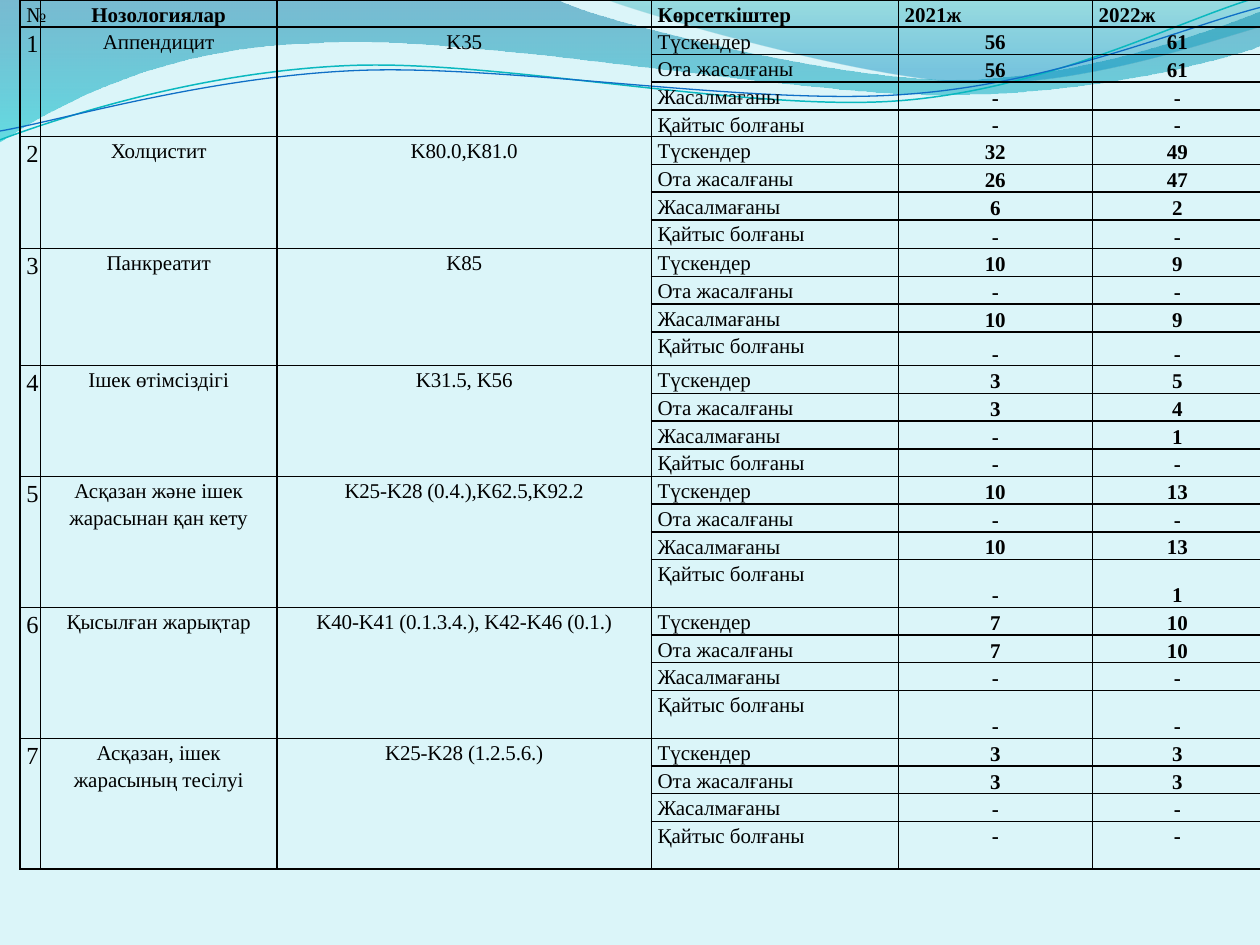
import dataclasses
import math

import lxml.etree
import pptx
import pptx.dml.color
import pptx.enum.text
import pptx.oxml.ns
import pptx.util

Inches = pptx.util.Inches
Align = pptx.enum.text.PP_ALIGN
Anchor = pptx.enum.text.MSO_ANCHOR
qn = pptx.oxml.ns.qn


@dataclasses.dataclass(frozen=True)
class Theme:
    font: str = "Times New Roman"
    body_size: float = 12
    number_size: float = 14
    line_spacing: float = 1.15
    ink: str = "000000"
    background: str = "DBF5F9"
    wide_wave: tuple = (("0074A1", 45, 0), ("00C6CF", 55, 1))
    short_wave: tuple = (("00A1A9", 30, 0), ("008BBF", 45, 0.8))
    teal: str = "0AB8BF"
    blue: str = "0F6FC6"


THEME = Theme()


def color(value):
    return pptx.dml.color.RGBColor.from_string(value)


def write(frame, text, size=THEME.body_size, bold=False, align=Align.CENTER, tracking=0):
    para = frame.paragraphs[0]
    para.alignment = align
    para.line_spacing = THEME.line_spacing
    if not text:
        end = lxml.etree.SubElement(para._p, qn("a:endParaRPr"))
        end.set("sz", str(int(size * 100)))
        return
    span = para.add_run()
    span.text = text
    span.font.name = THEME.font
    span.font.size = pptx.util.Pt(size)
    span.font.bold = bold
    span.font.color.rgb = color(THEME.ink)
    if tracking:
        span.font._element.set("spc", str(tracking))


class Page:
    def __init__(self, deck, theme):
        self.theme = theme
        self.slide = deck.slides.add_slide(deck.slide_layouts[6])
        fill = self.slide.background.fill
        fill.solid()
        fill.fore_color.rgb = color(theme.background)

    def outline(self, start, steps, close):
        points = [point for step in steps for point in step]
        scaled = [(Inches(x), Inches(y)) for x, y in points]
        builder = self.slide.shapes.build_freeform(Inches(start[0]), Inches(start[1]))
        builder.add_line_segments(scaled, close=close)
        shape = builder.convert_to_shape()
        shape.shadow.inherit = False
        segments = iter(list(shape.element.iter(qn("a:lnTo"))))
        for step in steps:
            group = [next(segments) for _ in step]
            if len(group) == 3:
                curve = lxml.etree.Element(qn("a:cubicBezTo"))
                group[0].addprevious(curve)
                for segment in group:
                    curve.append(segment[0])
                    segment.getparent().remove(segment)
        return shape

    def wave(self, start, steps, stops):
        shape = self.outline(start, steps, True)
        shape.line.fill.background()
        shape.fill.gradient()
        shape.fill.gradient_angle = 270
        for stop, (tint, opacity, position) in zip(shape.fill.gradient_stops, stops):
            stop.color.rgb = color(tint)
            stop.position = position
        for tint, stop in zip(shape.element.iter(qn("a:srgbClr")), stops):
            alpha = lxml.etree.SubElement(tint, qn("a:alpha"))
            alpha.set("val", str(stop[1] * 1000))

    def ribbon(self, start, steps, center, tilt, tint, width):
        angle = math.radians(tilt)

        def level(point):
            x, y = point[0] - center[0], point[1] - center[1]
            return (center[0] + x * math.cos(angle) - y * math.sin(angle),
                    center[1] + x * math.sin(angle) + y * math.cos(angle))

        flat = [[level(point) for point in step] for step in steps]
        shape = self.outline(level(start), flat, False)
        shape.rotation = 360 - tilt
        shape.fill.background()
        shape.line.color.rgb = color(tint)
        shape.line.width = pptx.util.Pt(width)

    def table(self, left, top, columns, rows):
        frame = self.slide.shapes.add_table(
            len(rows), len(columns), Inches(left), Inches(top),
            Inches(sum(columns)), Inches(sum(rows)))
        table = frame.table
        table.first_row = table.horz_banding = False
        for column, width in zip(table.columns, columns):
            column.width = Inches(width)
        for row, height in zip(table.rows, rows):
            row.height = Inches(height)
        for cell in table.iter_cells():
            self.border(cell)
        return table

    def border(self, cell):
        properties = cell._tc.get_or_add_tcPr()
        for side in ("a:lnL", "a:lnR", "a:lnT", "a:lnB"):
            edge = lxml.etree.SubElement(properties, qn(side), w=str(pptx.util.Pt(1)))
            fill = lxml.etree.SubElement(edge, qn("a:solidFill"))
            lxml.etree.SubElement(fill, qn("a:srgbClr"), val=self.theme.ink)
        cell.fill.background()

    def cell(self, table, row, column, text, anchor=Anchor.TOP, **style):
        cell = table.cell(row, column)
        cell.margin_left = cell.margin_right = Inches(0.05)
        cell.margin_top = cell.margin_bottom = 0
        cell.vertical_anchor = anchor
        write(cell.text_frame, text, **style)


HEADERS = ["№", "Нозологиялар", "", "Көрсеткіштер", "2021ж", "2022ж"]
INDICATORS = ["Түскендер", "Ота жасалғаны", "Жасалмағаны", "Қайтыс болғаны"]
DISEASES = [
    ("Аппендицит", "K35", "56 56 - -", "61 61 - -", 0.21),
    ("Холцистит", "K80.0,K81.0", "32 26 6 -", "49 47 2 -", 0.23),
    ("Панкреатит", "K85", "10 - 10 -", "9 - 9 -", 0.27),
    ("Ішек өтімсіздігі", "K31.5, K56", "3 3 - -", "5 4 1 -", 0.22),
    ("Асқазан және ішек жарасынан қан кету", "K25-K28 (0.4.),K62.5,K92.2",
     "10 - 10 -", "13 - 13 1", 0.38),
    ("Қысылған жарықтар", "K40-K41 (0.1.3.4.), K42-K46 (0.1.)",
     "7 7 - -", "10 10 - -", 0.38),
    ("Асқазан, ішек жарасының тесілуі", "K25-K28 (1.2.5.6.)",
     "3 3 - -", "3 3 - -", 0.38),
]


def draw_waves(page):
    page.wave((0, 0), [
        [(4.4, -0.01)],
        [(4.76, 0.17), (6.64, 0.63), (7.58, 0.63)],
        [(8.53, 0.63), (9.58, 0.26), (10, 0.09)],
        [(10.01, 0.36)],
        [(9.83, 0.44), (8.7, 0.76), (7.46, 0.75)],
        [(6.22, 0.75), (3.82, 0.28), (2.57, 0.34)],
        [(1.29, 0.36), (0.46, 0.83), (-0.01, 1.13)],
    ], THEME.wide_wave)
    page.wave((4.79, -0.01), [
        [(5.09, 0.11), (6.82, 0.62), (7.69, 0.65)],
        [(8.56, 0.69), (9.61, 0.32), (10, 0.21)],
        [(10, 0)],
    ], THEME.short_wave)
    page.ribbon((0, 1.11), [
        [(0.48, 0.93), (1.58, 0.57), (2.77, 0.52)],
        [(3.95, 0.47), (5.93, 0.89), (7.13, 0.8)],
        [(8.33, 0.71), (9.38, 0.15), (9.98, -0.02)],
    ], (4.99, 0.58), 2.7, THEME.teal, 0.85)
    page.ribbon((0, 1.04), [
        [(0.47, 0.96), (1.64, 0.61), (2.83, 0.56)],
        [(4.03, 0.51), (5.97, 0.84), (7.17, 0.75)],
        [(8.36, 0.67), (9.41, 0.21), (10, 0.06)],
    ], (5, 0.59), 2.7, THEME.blue, 0.75)


def draw_statistics(page):
    rows = [0.21]
    for disease in DISEASES:
        rows += [0.22, 0.22, 0.22, disease[-1]]
    table = page.table(0.16, 0, [0.16, 1.88, 2.97, 1.96, 1.54, 1.35], rows)
    for column, title in enumerate(HEADERS):
        page.cell(table, 0, column, title, bold=column > 0,
                  align=Align.CENTER if column == 1 else Align.LEFT)
    for index, (name, code, before, after, _) in enumerate(DISEASES):
        first = 1 + index * len(INDICATORS)
        last = first + len(INDICATORS) - 1
        page.cell(table, first, 0, str(index + 1), size=THEME.number_size, align=Align.LEFT)
        page.cell(table, first, 1, name)
        page.cell(table, first, 2, code, tracking=-10)
        for column in range(3):
            for row in range(first + 1, last + 1):
                page.cell(table, row, column, "")
            table.cell(first, column).merge(table.cell(last, column))
        for row, values in enumerate(zip(INDICATORS, before.split(), after.split()), first):
            page.cell(table, row, 3, values[0], align=Align.LEFT)
            anchor = Anchor.TOP if row == len(rows) - 1 else Anchor.BOTTOM
            for column, value in enumerate(values[1:], 4):
                page.cell(table, row, column, value, anchor, bold=True)


def main():
    deck = pptx.Presentation()
    deck.slide_width, deck.slide_height = Inches(10), Inches(7.5)
    page = Page(deck, THEME)
    draw_waves(page)
    draw_statistics(page)
    deck.save("out.pptx")


if __name__ == "__main__":
    main()
